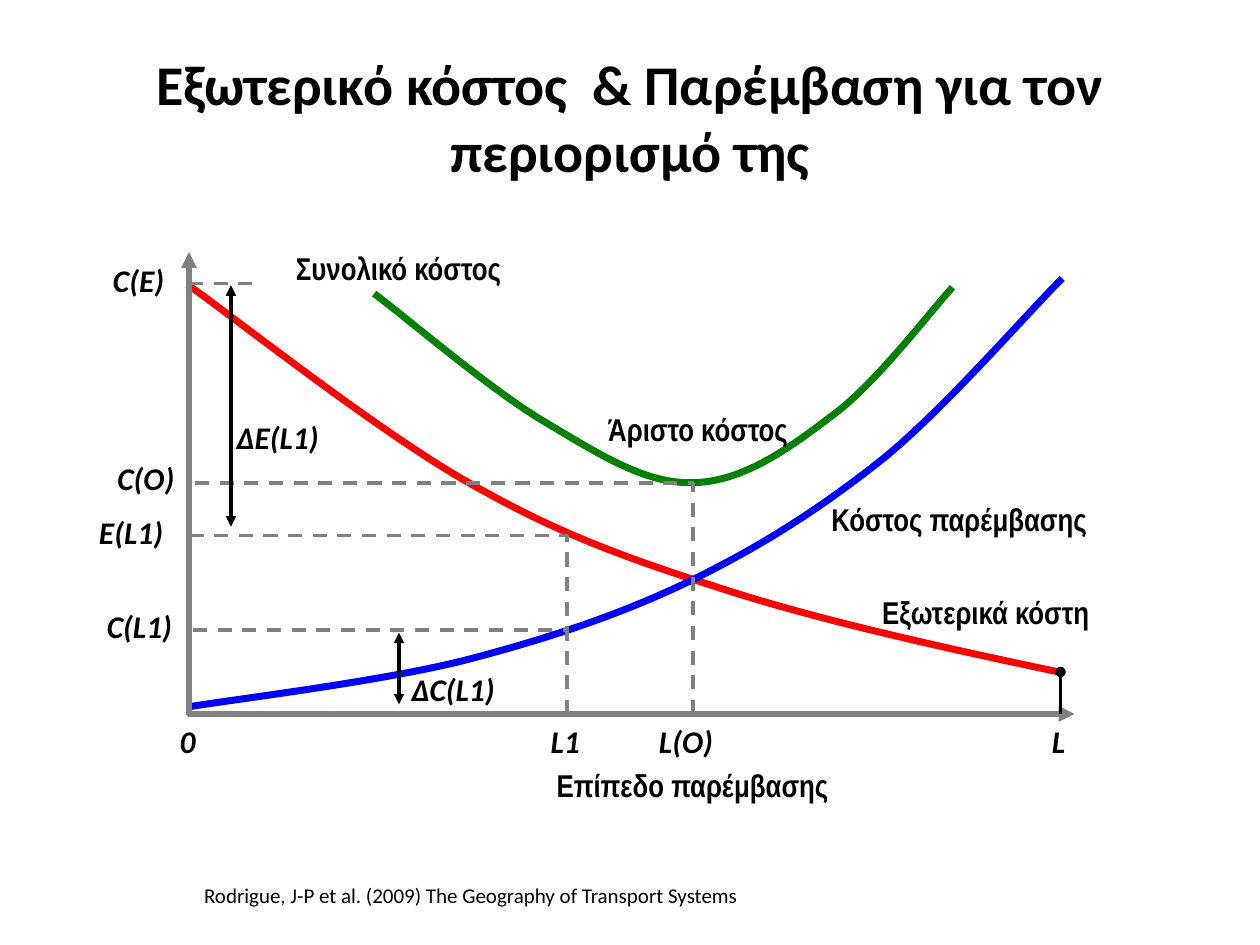
from lxml import etree
from pptx import Presentation
from pptx.dml.color import RGBColor
from pptx.enum import dml, shapes, text
from pptx.oxml import ns
from pptx.util import Pt

BLACK = RGBColor(0, 0, 0)
GRAY = RGBColor(0x80, 0x80, 0x80)
GREEN = RGBColor(0, 0x80, 0)
RED = RGBColor(0xFF, 0, 0)
BLUE = RGBColor(0, 0, 0xFF)

# Content
TITLE = "Εξωτερικό κόστος  & Παρέμβαση για τον περιορισμό της"

CAPTION = dict(name="Arial Narrow", size=Pt(18), bold=True)
SYMBOL = dict(name="Calibri", size=Pt(18), bold=True, italic=True)
CITATION = dict(name="Calibri", size=Pt(12))

# Wording, left, top, width
LABELS = [
    (CAPTION, [
        ("Επίπεδο παρέμβασης", 311, 434, 172),
        ("Άριστο κόστος", 340.5, 230.5, 119.5),
        ("Κόστος παρέμβασης", 468, 282, 163.5),
        ("Συνολικό κόστος", 162, 139, 134.5),
        ("Εξωτερικά κόστη", 497, 335.5, 136),
    ]),
    (SYMBOL, [
        ("0", 95.5, 409, 24),
        ("L1", 307.5, 409, 34.5),
        ("L(O)", 369.5, 409, 50.5),
        ("L", 594, 409, 25),
        ("C(E)", 57.5, 145.5, 50.5),
        ("C(O)", 60, 259, 52),
        ("E(L1)", 49.5, 289.5, 58.5),
        ("C(L1)", 54, 343.5, 58.5),
        ("ΔE(L1)", 128, 235.5, 70),
        ("ΔC(L1)", 228, 379.5, 70),
    ]),
    (CITATION, [
        ("Rodrigue, J-P et al. (2009) The Geography of Transport Systems", 109.5, 501, 325.5),
    ]),
]

# Each curve: a start point, then two control points and an end point per segment
CURVES = [
    (GREEN, [(213.8, 167.8),
             (230.4, 180), (280, 222.5), (310.3, 240.5),
             (340.6, 258.5), (367.9, 276.5), (395.3, 275.8),
             (423.4, 275.8), (450, 257), (474.5, 238.3),
             (499.7, 220.3), (529.9, 180), (544.3, 164.2)]),
    (RED, [(107.3, 162.7),
           (133.9, 181.4), (216.7, 247), (267.8, 275.8),
           (318.2, 304.6), (355.7, 318.2), (411.8, 336.2),
           (467.3, 354.2), (535.7, 369.4), (604.1, 383.8)]),
    (BLUE, [(108, 403.9),
            (133.9, 399.6), (217.4, 389.5), (265.7, 377.3),
            (313.2, 365), (356.4, 350.6), (396, 331.2),
            (435.6, 311.8), (469.4, 290.2), (504.7, 262.1),
            (540, 233.3), (585.4, 180.7), (607, 159.1)]),
]

AXIS_X, AXIS_Y = 108, 408
AXIS_TOP, AXIS_RIGHT = 144, 614
# Level on the x axis, cost on the y axis, bottom of the vertical part
GUIDES = [(324, 360, AXIS_Y), (396, 276, AXIS_Y), (324, 306, 366)]
# x, bottom, top of the double arrows
SPANS = [(132, 301, 163), (228, 402.5, 361.5)]

presentation = Presentation()
presentation.slide_width, presentation.slide_height = Pt(720), Pt(540)
slide = presentation.slides.add_slide(presentation.slide_layouts[5])


def write(frame, wording, font_format, alignment):
    paragraph = frame.paragraphs[0]
    paragraph.alignment = alignment
    run = paragraph.add_run()
    run.text = wording
    run.font.color.rgb = BLACK
    for name, value in font_format.items():
        setattr(run.font, name, value)


def style_line(shape, color, width, dashed=False, head=None, tail=None):
    shape.line.color.rgb = color
    shape.line.width = Pt(width)
    if dashed:
        shape.line.dash_style = dml.MSO_LINE.DASH
    properties = shape._element.spPr
    outline = properties.find(ns.qn("a:ln"))
    for tag, kind in (("a:headEnd", head), ("a:tailEnd", tail)):
        if kind:
            etree.SubElement(outline, ns.qn(tag), type=kind)
    etree.SubElement(properties, ns.qn("a:effectLst"))


def add_path(points, color, width, **line_format):
    start, *rest = [(Pt(x), Pt(y)) for x, y in points]
    builder = slide.shapes.build_freeform(*start)
    builder.add_line_segments(rest, close=False)
    shape = builder.convert_to_shape()
    shape.fill.background()
    style_line(shape, color, width, **line_format)
    return shape


def add_curve(points, color, width):
    shape = add_path(points, color, width)
    # Every three straight segments become one Bézier segment
    segments = list(shape._element.iter(ns.qn("a:lnTo")))
    for first in range(0, len(segments), 3):
        bezier = etree.Element(ns.qn("a:cubicBezTo"))
        segments[first].addprevious(bezier)
        for segment in segments[first:first + 3]:
            bezier.append(segment[0])
            segment.getparent().remove(segment)


def add_line(start, end, color, **line_format):
    connector = slide.shapes.add_connector(
        shapes.MSO_CONNECTOR.STRAIGHT, *(Pt(value) for value in (*start, *end)))
    style_line(connector, color, 2, **line_format)


# Title
title = slide.shapes.title
title.left, title.top, title.width, title.height = Pt(36), Pt(21.6), Pt(648), Pt(90)
title.text_frame.vertical_anchor = text.MSO_ANCHOR.MIDDLE
write(title.text_frame, TITLE, dict(name="Calibri", size=Pt(32), bold=True),
      text.PP_ALIGN.CENTER)

# Curves and axes
for color, points in CURVES:
    add_curve(points, color, 4)
add_path([(AXIS_X, AXIS_TOP), (AXIS_X, AXIS_Y), (AXIS_RIGHT, AXIS_Y)],
         GRAY, 3, head="triangle", tail="triangle")

# Guides, double arrows and the end mark of the external cost
for level, cost, bottom in GUIDES:
    add_path([(level, bottom), (level, cost), (AXIS_X, cost)], GRAY, 2, dashed=True)
add_line((AXIS_X, 162), (AXIS_X + 36, 162), GRAY, dashed=True)
for x, bottom, top in SPANS:
    add_line((x, bottom), (x, top), BLACK, head="triangle", tail="triangle")
add_line((606, AXIS_Y), (606, 384), BLACK, tail="oval")

# Labels
for font_format, labels in LABELS:
    height = font_format["size"].pt * 1.2 + 7.2
    for wording, left, top, width in labels:
        box = slide.shapes.add_textbox(Pt(left), Pt(top), Pt(width), Pt(height))
        box.text_frame.word_wrap = False
        box.text_frame.auto_size = text.MSO_AUTO_SIZE.SHAPE_TO_FIT_TEXT
        write(box.text_frame, wording, font_format, text.PP_ALIGN.LEFT)

presentation.save("out.pptx")
